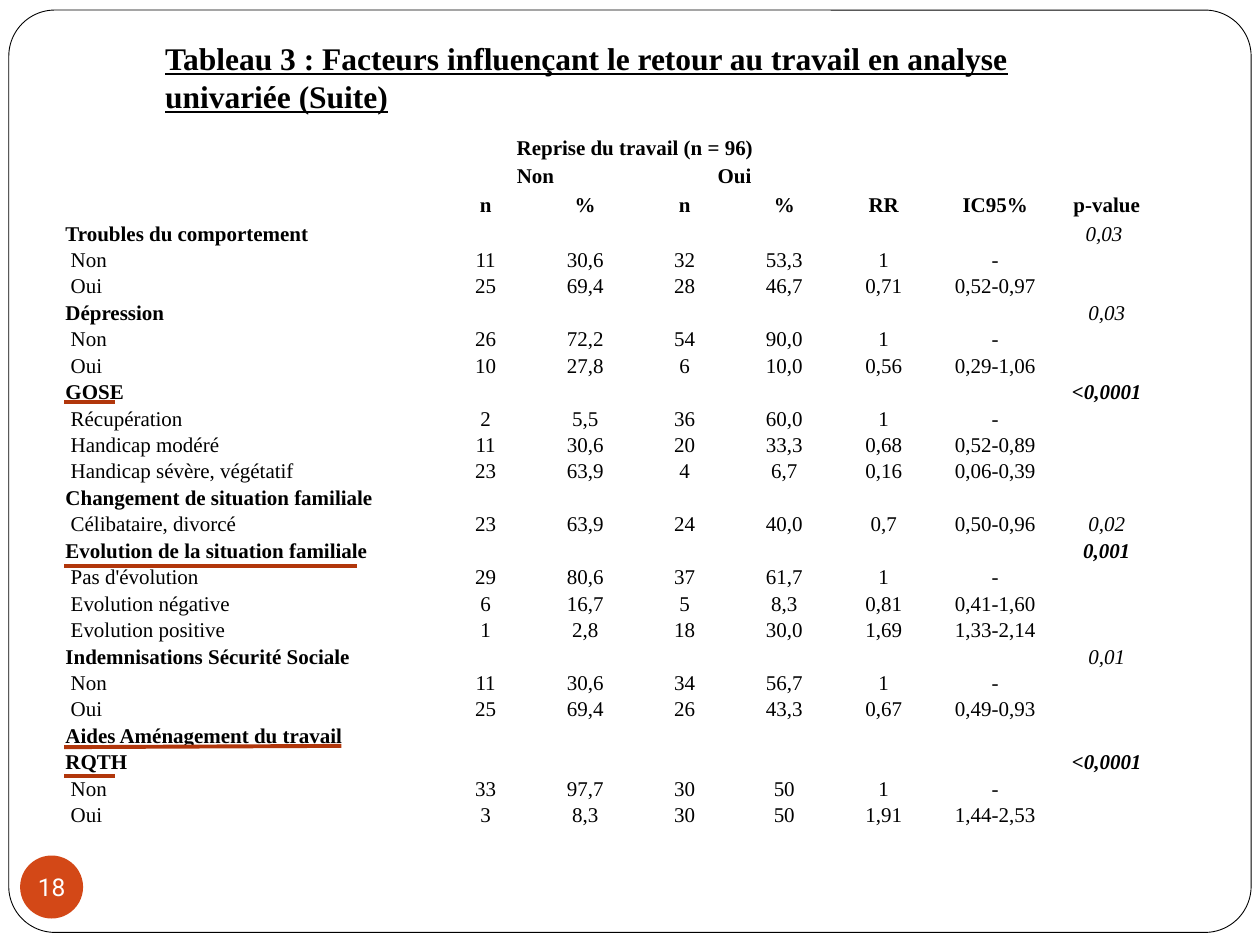
from pptx import Presentation
from pptx.dml.color import RGBColor
from pptx.enum.shapes import MSO_CONNECTOR, MSO_SHAPE
from pptx.enum.text import MSO_ANCHOR as Anchor, PP_ALIGN as Align
from pptx.oxml.ns import qn
from pptx.util import Inches, Pt
from lxml.etree import SubElement

BLACK = RGBColor(0x00, 0x00, 0x00)
WHITE = RGBColor(0xFF, 0xFF, 0xFF)
ORANGE = RGBColor(0xD3, 0x48, 0x17)
RUST = RGBColor(0xB1, 0x36, 0x0B)
SERIF = "Times New Roman"
NO_STYLE_NO_GRID = "{2D5ABB26-0587-4C30-8999-92F81FD0307C}"

TITLE = "Tableau 3 : Facteurs influençant le retour au travail en analyse univariée (Suite)"
COLUMN_WIDTHS = [2.95, 0.79, 0.79, 0.79, 0.79, 0.79, 0.98, 0.79]
HEADER_ROWS = [
    ["", "Reprise du travail (n = 96)"],
    ["", "Non", "", "Oui"],
    ["", "n", "%", "n", "%", "RR", "IC95%", "p-value"],
]
# Factor, p-value, columns its heading spans, its categories
FACTORS = [
    ("Troubles du comportement", "0,03 ", 3, [
        [" Non", "11", "30,6", "32", "53,3", "1", "-"],
        [" Oui", "25", "69,4", "28", "46,7", "0,71", "0,52-0,97"]]),
    ("Dépression", "0,03", 1, [
        [" Non", "26", "72,2", "54", "90,0", "1", "-"],
        [" Oui", "10", "27,8", "6", "10,0", "0,56", "0,29-1,06"]]),
    ("GOSE", "<0,0001", 1, [
        [" Récupération", "2", "5,5", "36", "60,0", "1", "-"],
        [" Handicap modéré", "11", "30,6", "20", "33,3", "0,68", "0,52-0,89"],
        [" Handicap sévère, végétatif", "23", "63,9", "4", "6,7", "0,16", "0,06-0,39"]]),
    ("Changement de situation familiale", "", 3, [
        [" Célibataire, divorcé", "23", "63,9", "24", "40,0", "0,7", "0,50-0,96", "0,02"]]),
    ("Evolution de la situation familiale", "0,001", 3, [
        [" Pas d'évolution", "29", "80,6", "37", "61,7", "1", "-"],
        [" Evolution négative", "6", "16,7", "5", "8,3", "0,81", "0,41-1,60"],
        [" Evolution positive", "1", "2,8", "18", "30,0", "1,69", "1,33-2,14"]]),
    ("Indemnisations Sécurité Sociale", "0,01", 1, [
        [" Non", "11", "30,6", "34", "56,7", "1", "-"],
        [" Oui", "25", "69,4", "26", "43,3", "0,67", "0,49-0,93"]]),
    ("Aides Aménagement du travail", "", 4, []),
    ("RQTH", "<0,0001", 1, [
        [" Non", "33", "97,7", "30", "50", "1", "-"],
        [" Oui", "3", "8,3", "30", "50", "1,91", "1,44-2,53"]]),
]
STRONG_P_VALUES = {"<0,0001", "0,001"}
# Underlined factors: right end, start height, end height
UNDERLINES = [(2.83, 4.49, 4.49), (2.71, 5.93, 5.92), (0.91, 6.16, 6.16), (0.91, 3.19, 3.19)]


def add_run(paragraph, text, size, color=BLACK, font=SERIF, bold=False, italic=False):
    run = paragraph.add_run()
    run.text = text
    run.font.name, run.font.size = font, Pt(size)
    run.font.bold, run.font.italic = bold, italic
    run.font.color.rgb = color
    return run


def set_margins(target, side, top=0.0, bottom=0.0):
    target.margin_left = target.margin_right = Inches(side)
    target.margin_top, target.margin_bottom = Inches(top), Inches(bottom)


def add_filled_shape(slide, kind, left, top, width, height, fill):
    shape = slide.shapes.add_shape(kind, Inches(left), Inches(top), Inches(width), Inches(height))
    shape.shadow.inherit = False
    shape.fill.solid()
    shape.fill.fore_color.rgb = fill
    return shape


def add_frame(slide):
    frame = add_filled_shape(slide, MSO_SHAPE.ROUNDED_RECTANGLE, 0.07, 0.08, 9.86, 7.32, WHITE)
    frame.adjustments[0] = 0.05
    frame.line.color.rgb = BLACK
    frame.line.width = Pt(0.5)
    # Send behind the title
    tree = slide.shapes._spTree
    tree.insert(2, frame._element)


def add_page_number(slide):
    badge = add_filled_shape(slide, MSO_SHAPE.OVAL, 0.16, 6.79, 0.5, 0.5, ORANGE)
    badge.line.fill.background()
    text_frame = badge.text_frame
    text_frame.word_wrap = False
    text_frame.vertical_anchor = Anchor.MIDDLE
    set_margins(text_frame, 0)
    paragraph = text_frame.paragraphs[0]
    paragraph.alignment = Align.CENTER
    add_run(paragraph, "18", 14, WHITE, "Roboto")


def format_title(slide):
    title = slide.shapes.title
    title.left, title.top = Inches(1.21), Inches(0.26)
    title.width, title.height = Inches(7.54), Inches(0.71)
    text_frame = title.text_frame
    text_frame.word_wrap = True
    text_frame.vertical_anchor = Anchor.TOP
    set_margins(text_frame, 0.1, 0.05, 0.05)
    paragraph = text_frame.paragraphs[0]
    paragraph.alignment = Align.LEFT
    add_run(paragraph, TITLE, 18, bold=True).font.underline = True


def fill_cell(cell, text, column, header, heading):
    cell.fill.background()
    paragraph = cell.text_frame.paragraphs[0]
    if not text:
        # Keep empty cells from stretching their row
        set_margins(cell, 0)
        end_properties = paragraph._p.get_or_add_endParaRPr()
        end_properties.set("sz", "1000")
        SubElement(end_properties, qn("a:latin")).set("typeface", SERIF)
        return
    if header:
        cell.vertical_anchor = Anchor.MIDDLE
        set_margins(cell, 0.03)
        paragraph.line_spacing = 1.06
    else:
        cell.vertical_anchor = Anchor.BOTTOM
        set_margins(cell, 0.01, 0.01)
    paragraph.alignment = Align.CENTER if header or column else Align.LEFT
    bold = header or (heading and column == 0) or text in STRONG_P_VALUES
    add_run(paragraph, text, 12, bold=bold, italic=not header and column == 7)


def add_results_table(slide):
    rows = list(HEADER_ROWS)
    merges = [(0, 1, 4), (1, 1, 2), (1, 3, 2)]
    headings = set()
    for factor, p_value, span, categories in FACTORS:
        headings.add(len(rows))
        if span > 1:
            merges.append((len(rows), 0, span))
        rows.append([factor] + [""] * 6 + [p_value])
        rows.extend(categories)

    table = slide.shapes.add_table(
        len(rows), len(COLUMN_WIDTHS), Inches(0.51), Inches(1.07), Inches(8.67), Inches(5.5)).table
    table.first_row = table.horz_banding = False
    table._tbl.tblPr.find(qn("a:tableStyleId")).text = NO_STYLE_NO_GRID
    for column, width in zip(table.columns, COLUMN_WIDTHS):
        column.width = Inches(width)
    for row_index, values in enumerate(rows):
        table.rows[row_index].height = Inches(0.23 if row_index in (1, 2) else 0.21)
        padded = values + [""] * (len(COLUMN_WIDTHS) - len(values))
        for column, text in enumerate(padded):
            fill_cell(table.cell(row_index, column), text, column,
                      row_index < len(HEADER_ROWS), row_index in headings)
    for row_index, first, span in merges:
        table.cell(row_index, first).merge(table.cell(row_index, first + span - 1))


def add_underline(slide, right, start_height, end_height):
    line = slide.shapes.add_connector(
        MSO_CONNECTOR.STRAIGHT, Inches(0.51), Inches(start_height), Inches(right), Inches(end_height))
    line.line.color.rgb = RUST
    line.line.width = Pt(2.25)
    SubElement(line._element.spPr, qn("a:effectLst"))


def main():
    presentation = Presentation()
    presentation.slide_width, presentation.slide_height = Inches(10), Inches(7.5)
    slide = presentation.slides.add_slide(presentation.slide_layouts[5])
    add_frame(slide)
    add_page_number(slide)
    format_title(slide)
    add_results_table(slide)
    for underline in UNDERLINES:
        add_underline(slide, *underline)
    presentation.save("out.pptx")


if __name__ == "__main__":
    main()
